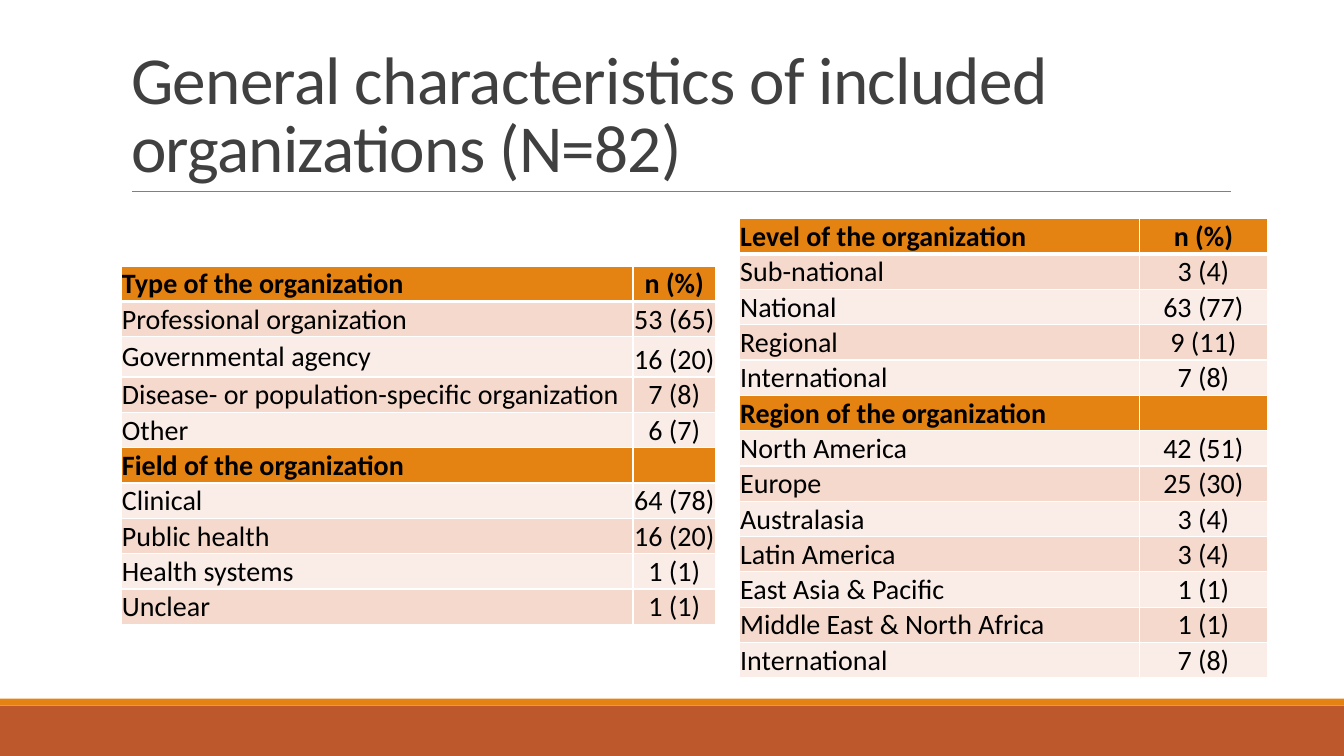
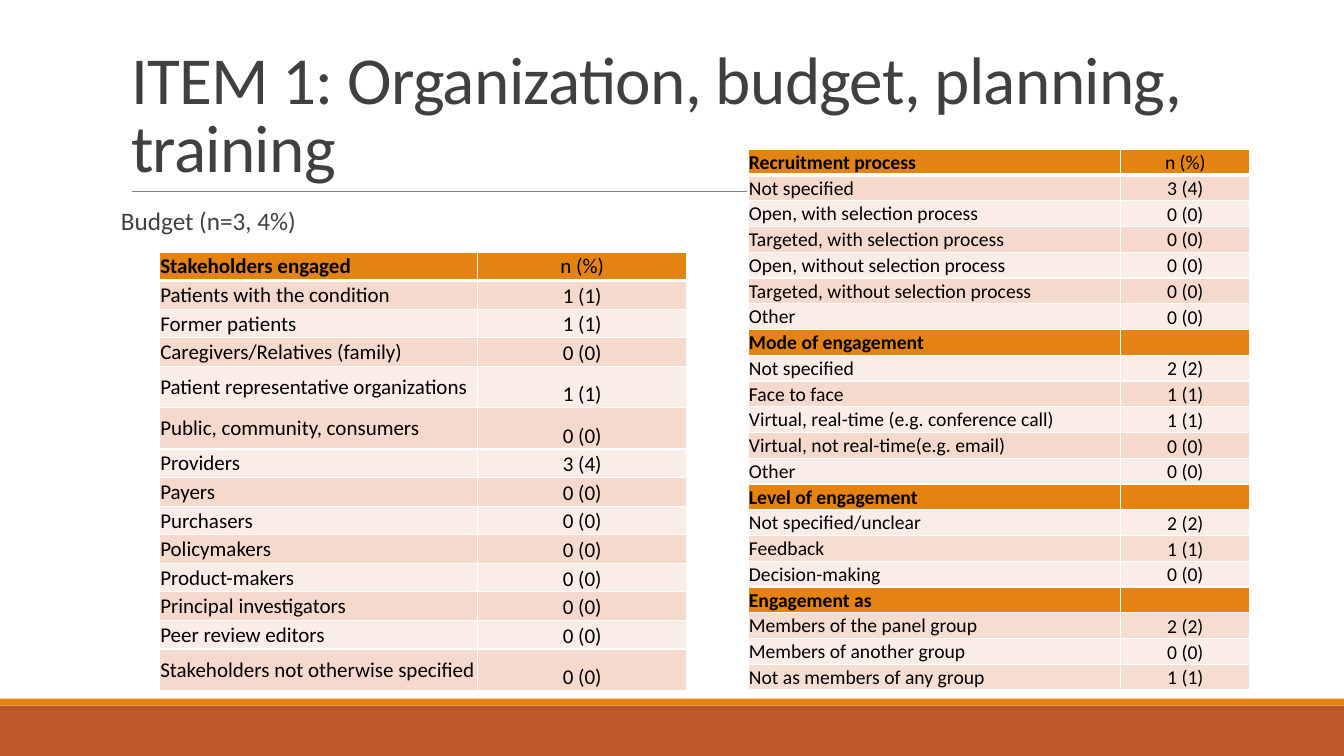
from dataclasses import dataclass

from lxml.etree import SubElement
from pptx import Presentation
from pptx.dml.color import RGBColor
from pptx.enum.shapes import MSO_CONNECTOR, MSO_SHAPE
from pptx.enum.text import MSO_ANCHOR, MSO_AUTO_SIZE, PP_ALIGN
from pptx.oxml.ns import qn
from pptx.util import Inches, Pt


@dataclass(frozen=True)
class Theme:
    font: str = "Calibri"
    rust: str = "BD582C"
    orange: str = "E48312"
    dark: str = "F5D9CC"
    soft: str = "F5DDD2"
    pale: str = "FAEDE7"
    white: str = "FFFFFF"
    black: str = "000000"
    text: str = "404040"
    rule: str = "808080"
    title_size: int = 48
    body_size: int = 18


T = Theme()


def put_text(tf, text, size, color=T.black, bold=False, align=PP_ALIGN.LEFT,
             spacing=1.0, kerning=0):
    p = tf.paragraphs[0]
    p.alignment = align
    p.line_spacing = spacing
    if not text:
        SubElement(p._p, qn("a:endParaRPr"), sz=str(size * 100))
        return
    r = p.add_run()
    r.text = text
    r.font.name = T.font
    r.font.size = Pt(size)
    r.font.bold = bold
    r.font.color.rgb = RGBColor.from_string(color)
    if kerning:
        r.font._element.set("spc", str(int(kerning * 100)))


def set_borders(cell, top=1, bottom=1):
    tcPr = cell._tc.get_or_add_tcPr()
    for side, width in (("L", 1), ("R", 1), ("T", top), ("B", bottom)):
        ln = SubElement(tcPr, qn(f"a:ln{side}"), w=str(Pt(width)))
        fill = SubElement(ln, qn("a:solidFill"))
        SubElement(fill, qn("a:srgbClr"), val=T.white)


slides = [
    dict(
        title="General characteristics of included organizations (N=82)",
        body=None,
        tables=[
            dict(
                at=(9, 35.2), cols=(38.1, 6.15), height=47.33,
                size=20, bold_count=True, tall={2: 5.33}, fills={},
                rows=[
                    ("Type of the organization", "n (%)"),
                    ("Professional organization", "53 (65)"),
                    ("Governmental agency", "16 (20)"),
                    ("Disease- or population-specific organization", "7 (8)"),
                    ("Other", "6 (7)"),
                    ("Field of the organization", ""),
                    ("Clinical", "64 (78)"),
                    ("Public health", "16 (20)"),
                    ("Health systems", "1 (1)"),
                    ("Unclear", "1 (1)"),
                ],
            ),
            dict(
                at=(55, 28.93), cols=(29.78, 9.53), height=60.4,
                size=20, bold_count=True, tall={}, fills={},
                rows=[
                    ("Level of the organization", "n (%)"),
                    ("Sub-national", "3 (4)"),
                    ("National", "63 (77)"),
                    ("Regional", "9 (11)"),
                    ("International", "7 (8)"),
                    ("Region of the organization", ""),
                    ("North America", "42 (51)"),
                    ("Europe", "25 (30)"),
                    ("Australasia", "3 (4)"),
                    ("Latin America", "3 (4)"),
                    ("East Asia & Pacific", "1 (1)"),
                    ("Middle East & North Africa", "1 (1)"),
                    ("International", "7 (8)"),
                ],
            ),
        ],
    ),
    dict(
        title="ITEM 1: Organization, budget, planning, training",
        body="Budget (n=3, 4%)",
        tables=[
            dict(
                at=(11.85, 33.33), cols=(23.7, 15.55), height=58,
                size=15, bold_count=False,
                tall={4: 5.47, 5: 5.47, 13: 5.47}, fills={},
                rows=[
                    ("Stakeholders engaged", "n (%)"),
                    ("Patients with the condition", "1 (1)"),
                    ("Former patients", "1 (1)"),
                    ("Caregivers/Relatives (family)", "0 (0)"),
                    ("Patient representative organizations", "1 (1)"),
                    ("Public, community, consumers", "0 (0)"),
                    ("Providers", "3 (4)"),
                    ("Payers", "0 (0)"),
                    ("Purchasers", "0 (0)"),
                    ("Policymakers", "0 (0)"),
                    ("Product-makers", "0 (0)"),
                    ("Principal investigators", "0 (0)"),
                    ("Peer review editors", "0 (0)"),
                    ("Stakeholders not otherwise specified", "0 (0)"),
                ],
            ),
            dict(
                at=(55.65, 19.73), cols=(27.75, 9.6), height=71.6,
                size=14, bold_count=False, tall={},
                fills={15: T.soft, 18: T.soft, 19: T.pale, 20: T.soft},
                rows=[
                    ("Recruitment process", "n (%)"),
                    ("Not specified", "3 (4)"),
                    ("Open, with selection process", "0 (0)"),
                    ("Targeted, with selection process", "0 (0)"),
                    ("Open, without selection process", "0 (0)"),
                    ("Targeted, without selection process", "0 (0)"),
                    ("Other", "0 (0)"),
                    ("Mode of engagement", ""),
                    ("Not specified", "2 (2)"),
                    ("Face to face", "1 (1)"),
                    ("Virtual, real-time (e.g. conference call)", "1 (1)"),
                    ("Virtual, not real-time(e.g. email)", "0 (0)"),
                    ("Other", "0 (0)"),
                    ("Level of engagement", ""),
                    ("Not specified/unclear", "2 (2)"),
                    ("Feedback", "1 (1)"),
                    ("Decision-making", "0 (0)"),
                    ("Engagement as", ""),
                    ("Members of the panel group", "2 (2)"),
                    ("Members of another group", "0 (0)"),
                    ("Not as members of any group", "1 (1)"),
                ],
            ),
        ],
    ),
]

prs = Presentation()
prs.slide_width, prs.slide_height = Inches(13.33), Inches(7.5)
cx, cy = prs.slide_width / 100, prs.slide_height / 100
layout = prs.slide_layouts[5]

for number, content in enumerate(slides):
    s = prs.slides.add_slide(layout)

    if number == 0:
        for top, height, color in ((93.33, 6.67, T.rust), (92.4, 0.93, T.orange)):
            band = s.shapes.add_shape(
                MSO_SHAPE.RECTANGLE, 0, int(top * cy), prs.slide_width, int(height * cy))
            band.shadow.inherit = False
            band.fill.solid()
            band.fill.fore_color.rgb = RGBColor.from_string(color)
            band.line.fill.background()
            layout.shapes.element.append(band._element)
        rule = s.shapes.add_connector(
            MSO_CONNECTOR.STRAIGHT,
            int(9.83 * cx), int(25.33 * cy), int(91.6 * cx), int(25.33 * cy))
        rule.line.color.rgb = RGBColor.from_string(T.rule)
        rule.line.width = Pt(0.5)
        SubElement(rule._element.spPr, qn("a:effectLst"))
        layout.shapes.element.append(rule._element)

    title = s.shapes.title
    title.left, title.top = int(9 * cx), int(4.13 * cy)
    title.width, title.height = int(82.5 * cx), int(21.2 * cy)
    tf = title.text_frame
    tf.word_wrap = True
    tf.auto_size = MSO_AUTO_SIZE.NONE
    tf.vertical_anchor = MSO_ANCHOR.BOTTOM
    put_text(tf, content["title"], T.title_size, color=T.text, spacing=0.85, kerning=-0.5)

    if content["body"]:
        sp = s.shapes.add_textbox(int(9 * cx), int(26.93 * cy), int(82.5 * cx), int(6 * cy))
        tf = sp.text_frame
        tf.word_wrap = True
        tf.margin_left = tf.margin_right = 0
        put_text(tf, content["body"], T.body_size, color=T.text, spacing=0.9)

    for spec_table in content["tables"]:
        rows, cols, tall = spec_table["rows"], spec_table["cols"], spec_table["tall"]
        left, top = spec_table["at"]
        height = spec_table["height"]
        pitch = (height - sum(tall.values())) / (len(rows) - len(tall))
        table = s.shapes.add_table(
            len(rows), len(cols), int(left * cx), int(top * cy),
            int(sum(cols) * cx), int(height * cy)).table
        table.horz_banding = False
        for column, width in zip(table.columns, cols):
            column.width = int(width * cx)
        for i, row in enumerate(rows):
            table.rows[i].height = int(tall.get(i, pitch) * cy)
            heading = i == 0 or not row[1]
            band_color = T.dark if i % 2 else T.pale
            color = T.orange if heading else spec_table["fills"].get(i, band_color)
            for j, text in enumerate(row):
                cell = table.cell(i, j)
                cell.margin_left = cell.margin_right = cell.margin_top = Inches(0.01)
                cell.margin_bottom = 0
                label = j == 0
                cell.vertical_anchor = (
                    MSO_ANCHOR.MIDDLE if label or heading else MSO_ANCHOR.BOTTOM)
                set_borders(cell, top=3 if i == 1 else 1, bottom=3 if i == 0 else 1)
                cell.fill.solid()
                cell.fill.fore_color.rgb = RGBColor.from_string(color)
                put_text(cell.text_frame, text, spec_table["size"],
                         bold=heading and (label or spec_table["bold_count"]),
                         align=PP_ALIGN.LEFT if label else PP_ALIGN.CENTER)

prs.save("out.pptx")
